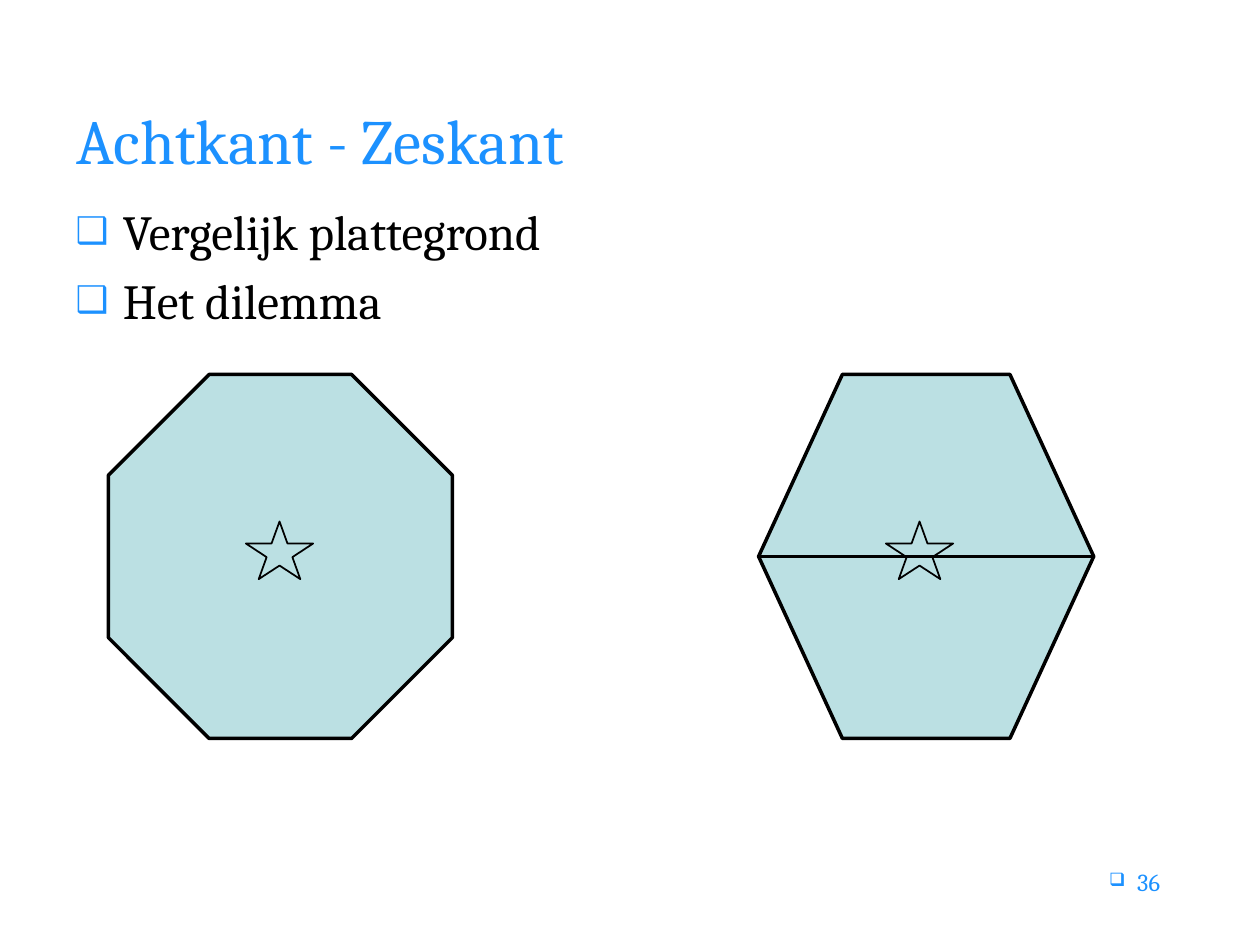
from lxml.etree import SubElement
from pptx import Presentation
from pptx.dml.color import RGBColor
from pptx.enum.shapes import MSO_CONNECTOR, MSO_SHAPE
from pptx.enum.text import MSO_ANCHOR, MSO_AUTO_SIZE, PP_ALIGN
from pptx.oxml.ns import qn
from pptx.util import Pt

COLORS = {"accent": "1C91FF", "text": "000000", "floor": "BBE0E3", "outline": "000000"}
FONT = "Cambria"


def color(name):
    return RGBColor.from_string(COLORS[name])


def place(part, box):
    part.left, part.top, part.width, part.height = (Pt(length) for length in box)


def prepare_frame(frame, anchor):
    frame.word_wrap = True
    frame.auto_size = MSO_AUTO_SIZE.NONE
    frame.vertical_anchor = anchor


def format_text(paragraph, size, color_name):
    for run in paragraph.runs:
        run.font.name = FONT
        run.font.size = Pt(size)
        run.font.color.rgb = color(color_name)


def add_bullet(paragraph, indent):
    properties = paragraph._p.get_or_add_pPr()
    properties.set("marL", str(Pt(indent)))
    properties.set("indent", str(-Pt(indent)))
    bullet_color = SubElement(properties, qn("a:buClr"))
    SubElement(bullet_color, qn("a:srgbClr"), val=COLORS["accent"])
    SubElement(properties, qn("a:buSzPct"), val="75000")
    SubElement(properties, qn("a:buChar"), char="❑")


def fill_title(title, box, text):
    place(title, box)
    prepare_frame(title.text_frame, MSO_ANCHOR.MIDDLE)
    title.text_frame.text = text
    heading = title.text_frame.paragraphs[0]
    heading.alignment = PP_ALIGN.LEFT
    format_text(heading, 36, "accent")


def fill_body(body, box, points):
    place(body, box)
    frame = body.text_frame
    prepare_frame(frame, MSO_ANCHOR.TOP)
    frame.text = "\n".join(points)
    for index, point in enumerate(frame.paragraphs):
        add_bullet(point, 27)
        point.space_before = Pt(5.6 if index else 0)
        format_text(point, 28, "text")


def add_page_number(slide, box, number):
    frame = slide.shapes.add_textbox(*(Pt(length) for length in box)).text_frame
    prepare_frame(frame, MSO_ANCHOR.TOP)
    frame.text = number
    page = frame.paragraphs[0]
    add_bullet(page, 16)
    page.alignment = PP_ALIGN.RIGHT
    format_text(page, 14, "accent")


def add_outline(slide, kind, box, line_width, fill=None):
    outline = slide.shapes.add_shape(kind, *(Pt(length) for length in box))
    outline.shadow.inherit = False
    if fill:
        outline.fill.solid()
        outline.fill.fore_color.rgb = color(fill)
    else:
        outline.fill.background()
    outline.line.color.rgb = color("outline")
    outline.line.width = Pt(line_width)


def add_floor_plan(slide, kind, box, star_left):
    left, top, width, height = box
    add_outline(slide, kind, box, 2, "floor")
    add_outline(slide, MSO_SHAPE.STAR_5_POINT, (star_left, top + 84, 38.5, 33), 1)


def add_dividing_wall(slide, box):
    left, top, width, height = box
    middle = top + height / 2
    wall = slide.shapes.add_connector(
        MSO_CONNECTOR.STRAIGHT, Pt(left), Pt(middle), Pt(left + width), Pt(middle))
    wall.line.color.rgb = color("outline")
    wall.line.width = Pt(2)
    SubElement(wall._element.spPr, qn("a:effectLst"))


def main():
    presentation = Presentation()
    presentation.slide_width, presentation.slide_height = Pt(720), Pt(540)
    slide = presentation.slides.add_slide(presentation.slide_layouts[1])
    fill_title(slide.shapes.title, (36.5, 55, 590, 49.5), "Achtkant - Zeskant")
    fill_body(slide.placeholders[1], (36, 111.5, 630, 371.5),
              ["Vergelijk plattegrond", "Het dilemma"])
    add_page_number(slide, (502, 492, 168, 37.5), "36")
    hexagon_box = (433.5, 214, 191.5, 208)
    add_floor_plan(slide, MSO_SHAPE.HEXAGON, hexagon_box, 506.25)
    add_floor_plan(slide, MSO_SHAPE.OCTAGON, (62, 214, 196.5, 208), 140.5)
    add_dividing_wall(slide, hexagon_box)
    presentation.save("out.pptx")


if __name__ == "__main__":
    main()
